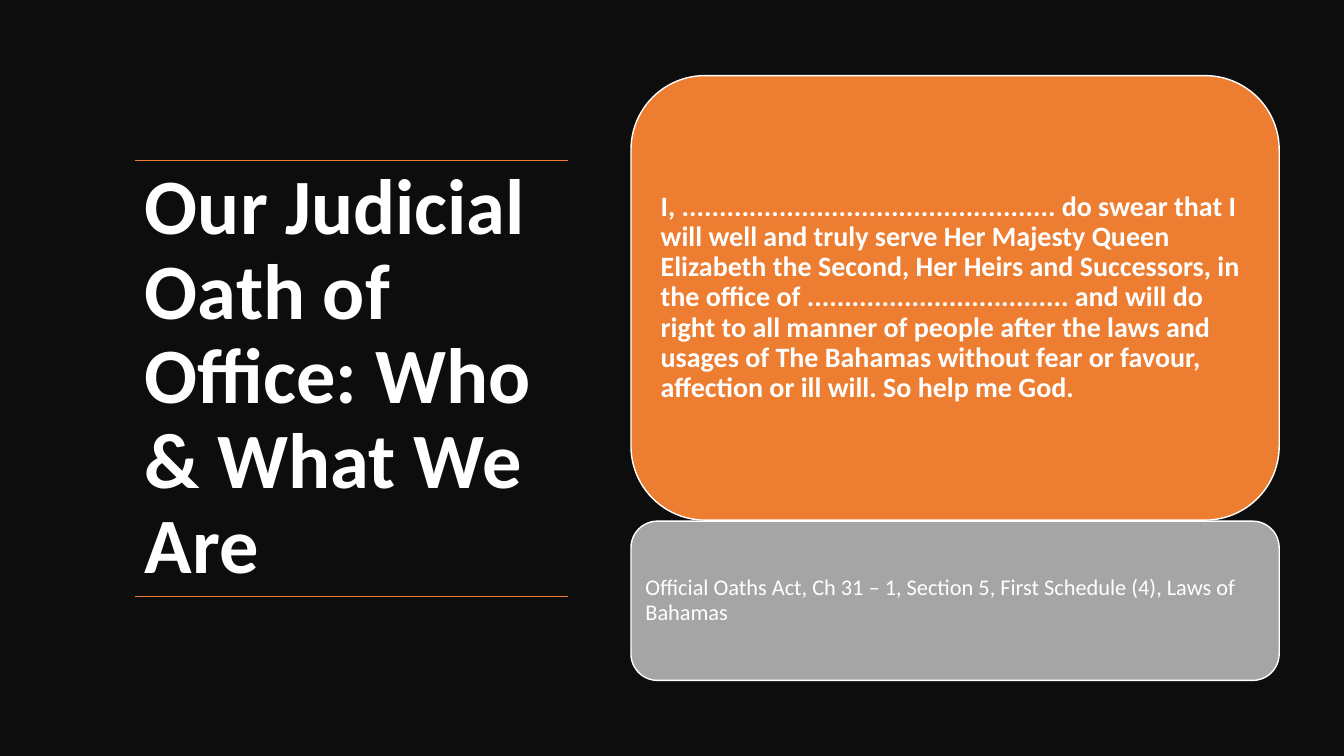
"""Build a slide with the judicial oath of office and its source."""
import pptx
import pptx.dml.color
import pptx.enum.shapes
import pptx.enum.text
import pptx.oxml
import pptx.oxml.ns
import pptx.util

Pt = pptx.util.Pt
KINDS = pptx.enum.shapes.MSO_SHAPE
WIDE, HIGH = 960, 540
FONT = "Calibri"
DARK, WHITE, ORANGE, GREY = "0D0D0D", "FFFFFF", "ED7D31", "A5A5A5"

TITLE = "Our Judicial Oath of Office: Who & What We Are"
OATH = (
    "I, " + "." * 50 + " do swear that I will well and truly serve "
    "Her Majesty Queen Elizabeth the Second, Her Heirs and Successors, "
    "in the office of " + "." * 35 + " and will do right to all manner of "
    "people after the laws and usages of The Bahamas without fear or favour, "
    "affection or ill will. So help me God."
)
SOURCE = ("Official Oaths Act, Ch 31 – 1, Section 5, First Schedule (4), "
          "Laws of Bahamas")

HEAD = (96.5, 114.5, 309.5, 311.5)
LEFT, TOP, WIDTH, GAP = 450.75, 54, 463, 0.75
CARDS = [
    (OATH, 317.5, ORANGE, 20, True, 5.75),
    (SOURCE, 113.75, GREY, 16, False, 4.75),
]


def hue(code):
    return pptx.dml.color.RGBColor.from_string(code)


def write(shape, text, size, bold):
    frame = shape.text_frame
    frame.word_wrap = True
    frame.vertical_anchor = pptx.enum.text.MSO_ANCHOR.MIDDLE
    frame.text = text
    para = frame.paragraphs[0]
    para.alignment = pptx.enum.text.PP_ALIGN.LEFT
    para.line_spacing = 0.9
    font = para.runs[0].font
    font.name, font.size, font.bold = FONT, Pt(size), bold
    font.color.rgb = hue(WHITE)


def block(slide, kind, box, fill):
    shape = slide.shapes.add_shape(kind, *map(Pt, box))
    shape.shadow.inherit = False
    shape.fill.solid()
    shape.fill.fore_color.rgb = hue(fill)
    return shape


def rule(slide, left, right, y):
    line = slide.shapes.add_connector(
        pptx.enum.shapes.MSO_CONNECTOR.STRAIGHT,
        Pt(right), Pt(y), Pt(left), Pt(y))
    line.line.color.rgb = hue(ORANGE)
    line.line.width = Pt(1)
    props = line._element.spPr
    props.append(pptx.oxml.parse_xml(
        "<a:effectLst %s/>" % pptx.oxml.ns.nsdecls("a")))


def main():
    deck = pptx.Presentation()
    deck.slide_width, deck.slide_height = Pt(WIDE), Pt(HIGH)
    slide = deck.slides.add_slide(deck.slide_layouts[6])

    back = block(slide, KINDS.RECTANGLE, (0, 0, WIDE, HIGH), DARK)
    back.line.fill.background()

    write(slide.shapes.add_textbox(*map(Pt, HEAD)), TITLE, 56, True)
    left, top, width, height = HEAD
    for y in (top, top + height):
        rule(slide, left, left + width, y)

    y = TOP
    for text, height, fill, size, bold, pad in CARDS:
        card = block(slide, KINDS.ROUNDED_RECTANGLE,
                     (LEFT, y, WIDTH, height), fill)
        card.line.color.rgb = hue(WHITE)
        card.line.width = Pt(1)
        write(card, text, size, bold)
        frame = card.text_frame
        frame.margin_left = frame.margin_right = Pt(pad)
        frame.margin_top = frame.margin_bottom = Pt(pad)
        y += height + GAP

    deck.save("out.pptx")


if __name__ == "__main__":
    main()
